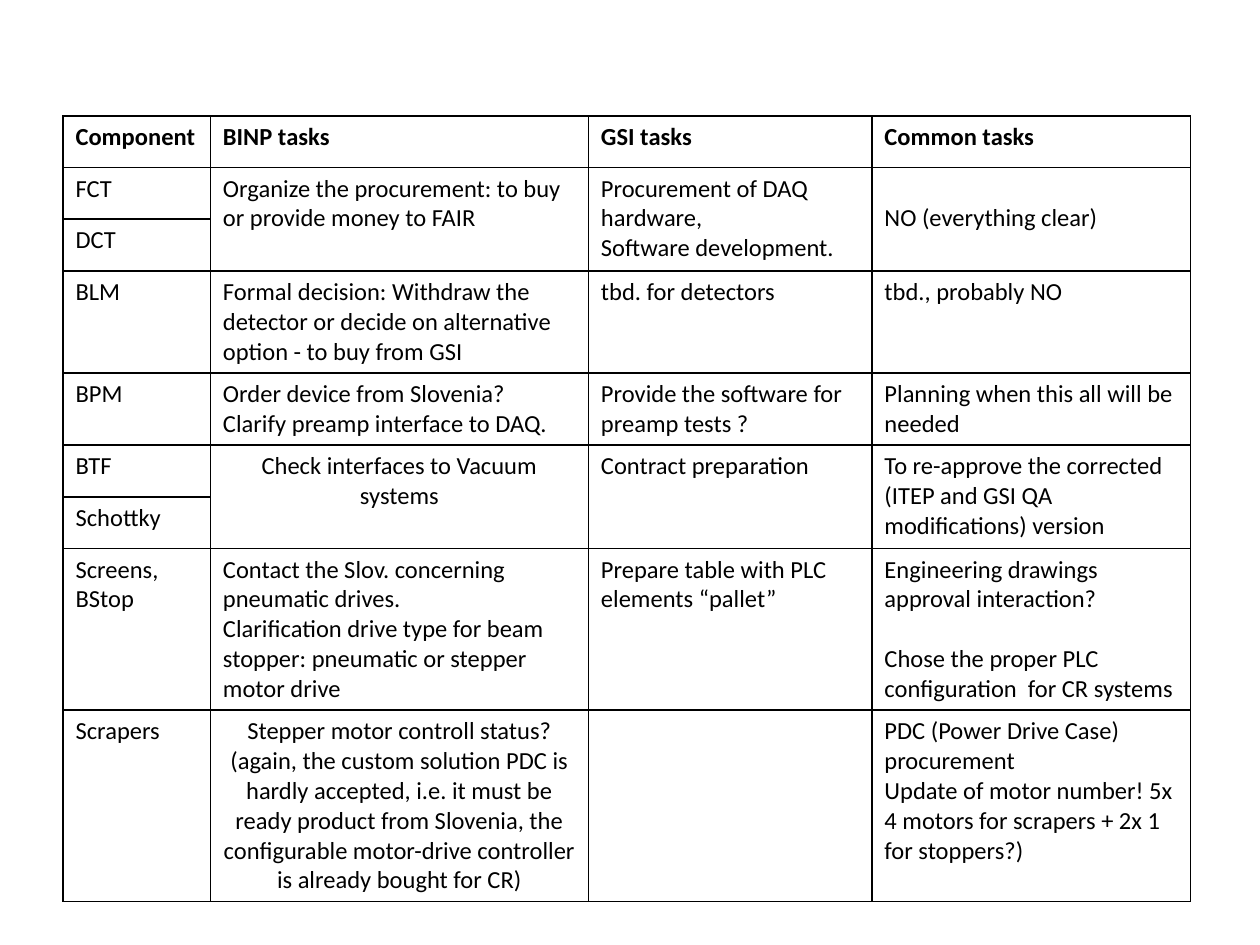
import pptx
import pptx.util
import pptx.dml.color
import pptx.enum.text
import pptx.oxml
import pptx.oxml.ns
from lxml import etree

Inches, Pt = pptx.util.Inches, pptx.util.Pt
BLACK = pptx.dml.color.RGBColor(0, 0, 0)
CENTER = pptx.enum.text.PP_ALIGN.CENTER
LEFT = pptx.enum.text.PP_ALIGN.LEFT
LINE = Pt(17)

COLS = [1.17, 3, 2.25, 2.53]
HEIGHTS = [0.41, 0.41, 0.41, 0.81, 0.57, 0.41, 0.41, 1.28, 1.52]
ROWS = [
    ["Component", "BINP tasks", "GSI tasks", "Common tasks"],
    ["FCT", "Organize the procurement: to buy or provide money to FAIR",
     "Procurement of DAQ hardware,\nSoftware development.", "NO (everything clear)"],
    ["DCT"],
    ["BLM", "Formal decision: Withdraw the detector or decide on alternative option - to buy from GSI",
     "tbd. for detectors", "tbd., probably NO"],
    ["BPM", "Order device from Slovenia?\nClarify preamp interface to DAQ.",
     "Provide the software for preamp tests ?", "Planning when this all will be needed"],
    ["BTF", "Check interfaces to Vacuum systems", "Contract preparation",
     "To re-approve the corrected (ITEP and GSI QA modifications) version"],
    ["Schottky"],
    ["Screens,\nBStop",
     "Contact the Slov. concerning pneumatic drives.\n"
     "Clarification drive type for beam stopper: pneumatic or stepper motor drive",
     "Prepare table with PLC elements “pallet”",
     "Engineering drawings approval interaction?\n"
     "Chose the proper PLC configuration  for CR systems"],
    ["Scrapers",
     "Stepper motor controll status? (again, the custom solution PDC is hardly accepted, "
     "i.e. it must be ready product from Slovenia, the configurable motor-drive controller "
     "is already bought for CR)",
     "",
     "PDC (Power Drive Case) procurement\n"
     "Update of motor number! 5x 4 motors for scrapers + 2x 1 for stoppers?)"],
]
MERGED_ROWS = [1, 5]
CENTERED = [(5, 1), (8, 1)]


def add_borders(cell):
    """Draw a thin black line on the four sides of a cell."""
    tc_pr = cell._tc.get_or_add_tcPr()
    for i, side in enumerate(("lnL", "lnR", "lnT", "lnB")):
        ln = etree.Element(pptx.oxml.ns.qn(f"a:{side}"), w=str(Pt(1)))
        fill = etree.SubElement(ln, pptx.oxml.ns.qn("a:solidFill"))
        etree.SubElement(fill, pptx.oxml.ns.qn("a:srgbClr"), val=str(BLACK))
        tc_pr.insert(i, ln)


def format_cell(cell, text, bold, align):
    """Fill a cell with text and give it its font and borders."""
    cell.fill.background()
    add_borders(cell)
    cell.text = text
    for p in cell.text_frame.paragraphs:
        p.alignment = align
        p.font.name = "Calibri"
        p.font.size = Pt(14)
        p.font.bold = bold
        p.font.color.rgb = BLACK


def add_task_table(slide, left, top, width, height):
    """Place the table of tasks for each component in the given box."""
    table = slide.shapes.add_table(len(ROWS), len(COLS), left, top, width, height).table
    table.first_row = table.horz_banding = False
    for column, w in zip(table.columns, COLS):
        column.width = Inches(w)
    for r, (texts, h) in enumerate(zip(ROWS, HEIGHTS)):
        table.rows[r].height = Inches(h)
        for c in range(len(COLS)):
            text = texts[c] if c < len(texts) else ""
            align = CENTER if (r, c) in CENTERED else LEFT
            format_cell(table.cell(r, c), text, r == 0, align)
    for r in MERGED_ROWS:
        for c in range(1, len(COLS)):
            table.cell(r, c).merge(table.cell(r + 1, c))
    table.cell(1, 3).margin_top = Inches(0.05) + LINE
    table.cell(7, 3).text_frame.paragraphs[1].space_before = LINE


def main():
    """Build the slide and save it."""
    prs = pptx.Presentation()
    prs.slide_width, prs.slide_height = Inches(10), Inches(7.5)
    slide = prs.slides.add_slide(prs.slide_layouts[6])
    add_task_table(slide, Inches(0.5), Inches(0.92), Inches(sum(COLS)), Inches(sum(HEIGHTS)))
    prs.save("out.pptx")


if __name__ == "__main__":
    main()
